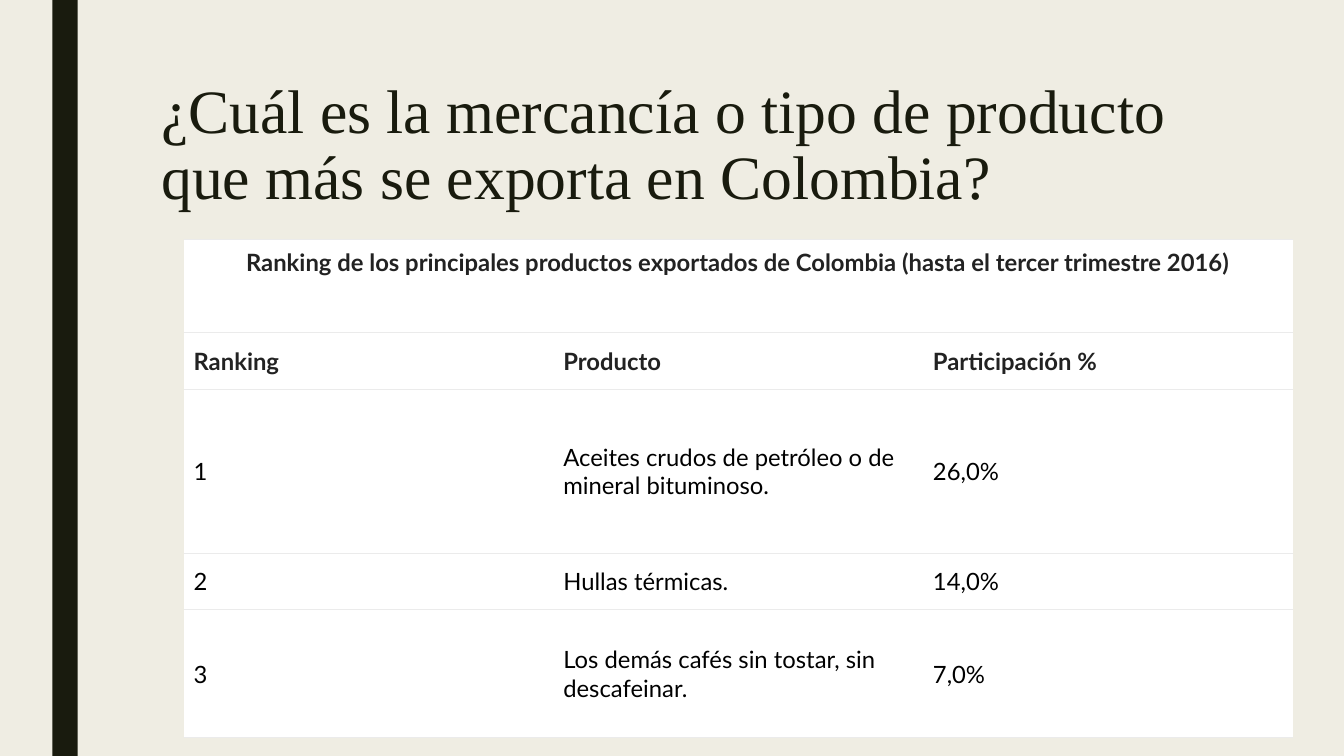
from dataclasses import dataclass

from lxml import etree
from pptx import Presentation
from pptx.dml.color import RGBColor
from pptx.enum.shapes import MSO_SHAPE
from pptx.enum.text import MSO_ANCHOR, PP_ALIGN
from pptx.oxml.ns import qn
from pptx.util import Inches, Pt

RECTANGLE = MSO_SHAPE.RECTANGLE
TOP, MIDDLE = MSO_ANCHOR.TOP, MSO_ANCHOR.MIDDLE
LEFT, CENTER = PP_ALIGN.LEFT, PP_ALIGN.CENTER


@dataclass(frozen=True)
class Theme:
    background: str = "EFEDE3"
    dark: str = "191B0E"
    cell: str = "FFFFFF"
    rule: str = "EBEBEB"
    heading: str = "222222"
    body: str = "000000"
    title_font: str = "Times New Roman"
    table_font: str = "Lato"
    title_size: int = 44
    table_size: int = 17
    rule_width: float = 0.75


THEME = Theme()

QUESTION = "¿Cuál es la mercancía o tipo de producto que más se exporta en Colombia?"
CAPTION = "Ranking de los principales productos exportados de Colombia (hasta el tercer trimestre 2016)"
RANKING = [
    (CAPTION, "", ""),
    ("Ranking", "Producto", "Participación %"),
    ("1", "Aceites crudos de petróleo o de mineral bituminoso.", "26,0%"),
    ("2", "Hullas térmicas.", "14,0%"),
    ("3", "Los demás cafés sin tostar, sin descafeinar.", "7,0%"),
]
HEADING_ROWS = 2
ROW_HEIGHTS = [0.92, 0.56, 1.63, 0.56, 1.27]


def style_runs(paragraph, font_name, size, color, bold=False):
    for run in paragraph.runs:
        run.font.name = font_name
        run.font.size = Pt(size)
        run.font.bold = bold
        run.font.color.rgb = RGBColor.from_string(color)


def set_borders(cell):
    properties = cell._tc.get_or_add_tcPr()
    for side in ("lnL", "lnR", "lnT", "lnB"):
        line = etree.SubElement(properties, qn(f"a:{side}"))
        if side in ("lnL", "lnR"):
            etree.SubElement(line, qn("a:noFill"))
        else:
            line.set("w", str(Pt(THEME.rule_width)))
            fill = etree.SubElement(line, qn("a:solidFill"))
            etree.SubElement(fill, qn("a:srgbClr"), val=THEME.rule)


def add_side_band(slide, left, top, width, height):
    band = slide.shapes.add_shape(
        RECTANGLE, Inches(left), Inches(top), Inches(width), Inches(height))
    band.shadow.inherit = False
    band.fill.solid()
    band.fill.fore_color.rgb = RGBColor.from_string(THEME.dark)
    band.line.fill.background()


def place_title(slide, left, top, width, height):
    title = slide.shapes.title
    title.left, title.top = Inches(left), Inches(top)
    title.width, title.height = Inches(width), Inches(height)
    frame = title.text_frame
    frame.text = QUESTION
    frame.word_wrap = True
    frame.vertical_anchor = TOP
    paragraph = frame.paragraphs[0]
    paragraph.alignment = LEFT
    paragraph.line_spacing = 0.89
    style_runs(paragraph, THEME.title_font, THEME.title_size, THEME.dark)


def format_cell(cell, text, is_caption, is_heading):
    cell.margin_left = cell.margin_right = Inches(0.1)
    cell.margin_top = cell.margin_bottom = Inches(0.08)
    cell.vertical_anchor = TOP if is_caption else MIDDLE
    set_borders(cell)
    cell.fill.solid()
    cell.fill.fore_color.rgb = RGBColor.from_string(THEME.cell)
    cell.text_frame.text = text
    paragraph = cell.text_frame.paragraphs[0]
    paragraph.alignment = CENTER if is_caption else LEFT
    color = THEME.heading if is_heading else THEME.body
    style_runs(paragraph, THEME.table_font, THEME.table_size, color, is_heading)


def add_ranking_table(slide, left, top, width, height):
    column_count = len(RANKING[0])
    ranking = slide.shapes.add_table(
        len(RANKING), column_count,
        Inches(left), Inches(top), Inches(width), Inches(height)).table
    ranking.first_row = False
    ranking.horz_banding = False
    for column in ranking.columns:
        column.width = Inches(width / column_count)
    for row, row_height in zip(ranking.rows, ROW_HEIGHTS):
        row.height = Inches(row_height)
    for row_index, entries in enumerate(RANKING):
        for column_index, text in enumerate(entries):
            format_cell(ranking.cell(row_index, column_index), text,
                        row_index == 0, row_index < HEADING_ROWS)
    ranking.cell(0, 0).merge(ranking.cell(0, column_count - 1))


def build_ranking_slide(presentation):
    slide = presentation.slides.add_slide(presentation.slide_layouts[5])
    slide.background.fill.solid()
    slide.background.fill.fore_color.rgb = RGBColor.from_string(THEME.background)
    add_side_band(slide, 0.52, 0, 0.25, 7.5)
    place_title(slide, 1.5, 0.75, 10.5, 1.62)
    add_ranking_table(slide, 1.82, 2.38, 11, sum(ROW_HEIGHTS))


def main():
    presentation = Presentation()
    presentation.slide_width = Inches(13.33)
    presentation.slide_height = Inches(7.5)
    build_ranking_slide(presentation)
    presentation.save("out.pptx")


if __name__ == "__main__":
    main()
